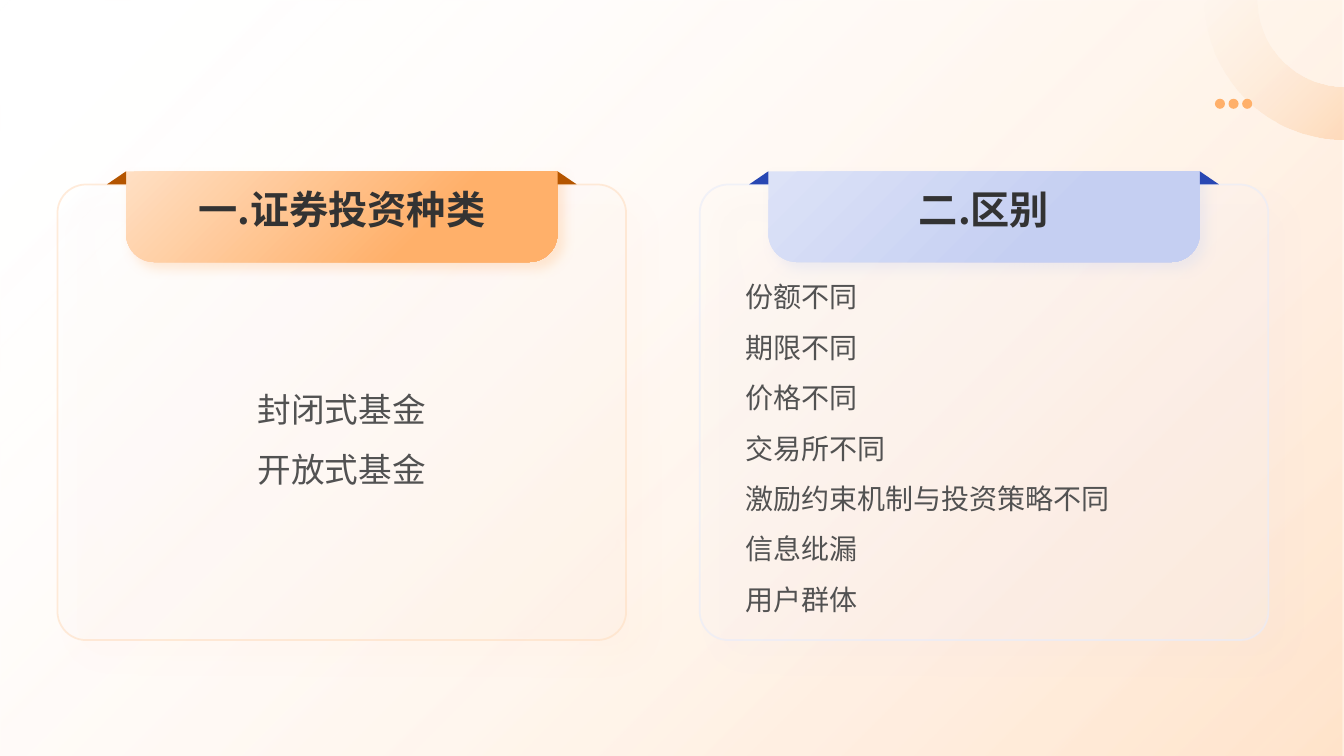
import math

from lxml import etree
from pptx import Presentation
from pptx import util as u
from pptx.dml.color import RGBColor
from pptx.enum import shapes, text
from pptx.oxml import ns

# Content
FONT = "Noto Sans CJK SC"
HEADING_COLOR, LIST_COLOR = "333333", "525252"
ORANGE, PEACH = "FFB06A", "FFDFC3"
CARDS = [
    dict(heading="一.证券投资种类",
         items=["封闭式基金", "开放式基金"],
         left=0.57, list_middle=4.26, size=24, pitch=43, align=text.PP_ALIGN.CENTER,
         tint="FFEFE1", edge=PEACH, pale=PEACH, main=ORANGE, fold="B45500", turn=69),
    dict(heading="二.区别",
         items=["份额不同", "期限不同", "价格不同", "交易所不同",
                "激励约束机制与投资策略不同", "信息纰漏", "用户群体"],
         left=6.94, list_middle=4.36, size=20, pitch=36, align=text.PP_ALIGN.JUSTIFY,
         tint="F3F5FC", edge="E8ECFA", pale="DCE2F7", main="C5CFF2", fold="2847B3", turn=66),
]

# Layout, in inches
SLIDE_W, SLIDE_H = 13.33, 7.5
CARD_TOP, CARD_W, CARD_H = 1.83, 5.64, 4.52
BANNER_TOP, BANNER_W, BANNER_H = 1.7, 4.28, 0.9
FOLD_W, FOLD_H = 0.19, 0.13
LIST_INSET, LIST_H = 0.45, 3.5
RING_OUTER, RING_INNER, RING_STEPS = 1.38, 0.86, 40
DOT, DOT_PITCH, DOT_LEFT, DOT_TOP = 0.1, 0.135, 12.05, 0.98

MSO = shapes.MSO_SHAPE


def sub(parent, tag, **attributes):
    return etree.SubElement(parent, ns.qn(tag), {k: str(v) for k, v in attributes.items()})


def color(parent, hex_color, alpha=100):
    sub(sub(parent, "a:srgbClr", val=hex_color), "a:alpha", val=alpha * 1000)


def paint(shape, stops, corner=False):
    """Fill with (position, colour, alpha) stops; a single stop is a solid fill."""
    shape.line.fill.background()
    shape.shadow.inherit = False
    props = shape._element.spPr
    if len(stops) == 1:
        fill = etree.Element(ns.qn("a:solidFill"))
        color(fill, *stops[0][1:])
    else:
        fill = etree.Element(ns.qn("a:gradFill"), rotWithShape="1")
        stop_list = sub(fill, "a:gsLst")
        for position, hex_color, alpha in stops:
            color(sub(stop_list, "a:gs", pos=position * 1000), hex_color, alpha)
        if corner:
            sub(sub(fill, "a:path", path="circle"), "a:fillToRect", l=100000, t=100000)
        else:
            sub(fill, "a:lin", ang=45 * 60000, scaled=0)
    props.find(ns.qn("a:ln")).addprevious(fill)


def cast_shadow(shape, hex_color, alpha, blur, distance):
    effects = shape._element.spPr.find(ns.qn("a:effectLst"))
    shadow = sub(effects, "a:outerShdw", blurRad=u.Pt(blur), dist=u.Pt(distance),
                 dir=45 * 60000, algn="tl", rotWithShape=0)
    color(shadow, hex_color, alpha)


def add(kind, left, top, width, height, stops, adjust=(), corner=False):
    shape = slide.shapes.add_shape(kind, *map(u.Inches, (left, top, width, height)))
    for i, value in enumerate(adjust):
        shape.adjustments[i] = value
    paint(shape, stops, corner)
    return shape


def write(holder, box, lines, size, hex_color, align, bold=False, pitch=None):
    holder.left, holder.top, holder.width, holder.height = map(u.Inches, box)
    slide.shapes._spTree.append(holder._element)  # bring in front of the card
    frame = holder.text_frame
    frame.margin_left = frame.margin_right = frame.margin_top = frame.margin_bottom = 0
    frame.vertical_anchor = text.MSO_ANCHOR.MIDDLE
    frame.auto_size = text.MSO_AUTO_SIZE.NONE
    frame.word_wrap = True
    frame.text = "\n".join(lines)
    for paragraph in frame.paragraphs:
        paragraph.alignment = align
        paragraph.space_before = u.Pt(0)
        if pitch:
            paragraph.line_spacing = u.Pt(pitch)
        props = paragraph._p.get_or_add_pPr()
        props.set("marL", "0")
        props.set("indent", "0")
        sub(props, "a:buNone")
        font = paragraph.font
        font.size, font.bold, font.name = u.Pt(size), bold, FONT
        font.color.rgb = RGBColor.from_string(hex_color)
        sub(font._element, "a:ea", typeface=FONT)


prs = Presentation()
prs.slide_width, prs.slide_height = u.Inches(SLIDE_W), u.Inches(SLIDE_H)
slide = prs.slides.add_slide(prs.slide_layouts.get_by_name("Comparison"))
title = slide.shapes.title
title._element.getparent().remove(title._element)

# Background wash
add(MSO.RECTANGLE, 0, 0, SLIDE_W, SLIDE_H, [(0, "FFFFFF", 0), (99, ORANGE, 34)])

# Quarter ring in the top right corner
angles = [math.pi / 2 * i / RING_STEPS for i in range(RING_STEPS + 1)]
arcs = [(RING_OUTER, a) for a in angles] + [(RING_INNER, a) for a in reversed(angles)]
points = [(u.Inches(SLIDE_W - r * math.cos(a)), u.Inches(r * math.sin(a))) for r, a in arcs]
outline = slide.shapes.build_freeform(*points[0])
outline.add_line_segments(points[1:], close=True)
paint(outline.convert_to_shape(), [(0, PEACH, 0), (100, ORANGE, 34)])

# Three dots
for i in range(3):
    add(MSO.OVAL, DOT_LEFT + i * DOT_PITCH, DOT_TOP, DOT, DOT, [(0, ORANGE, 100)])

# Cards with banner, folds, heading and list
for n, card in enumerate(CARDS):
    left, main = card["left"], card["main"]
    card_box = (left, CARD_TOP, CARD_W, CARD_H)
    base = add(MSO.ROUNDED_RECTANGLE, *card_box, [(0, "FFFFFF", 5)], [0.063])
    panel = add(MSO.ROUNDED_RECTANGLE, *card_box,
                [(0, card["tint"], 20), (100, "FFFFFF", 0)], [0.063], corner=True)
    for layer in (base, panel):
        cast_shadow(layer, main, 8, 22, 18)
    panel.line.width = u.Pt(1.25)
    panel.line.color.rgb = RGBColor.from_string(card["edge"])
    edge_color = panel._element.spPr.find(ns.qn("a:ln")).find(".//" + ns.qn("a:srgbClr"))
    sub(edge_color, "a:alpha", val=60000)

    banner_left = left + (CARD_W - BANNER_W) / 2
    banner = add(MSO.ROUND_2_SAME_RECTANGLE, banner_left, BANNER_TOP, BANNER_W, BANNER_H,
                 [(0, card["pale"], 100), (card["turn"], main, 100), (100, main, 100)],
                 [0, 0.314])
    cast_shadow(banner, main, 25, 8, 6)
    for fold_left, apex in ((banner_left - FOLD_W, 1), (banner_left + BANNER_W, 0)):
        add(MSO.ISOSCELES_TRIANGLE, fold_left, BANNER_TOP, FOLD_W, FOLD_H,
            [(0, card["fold"], 100)], [apex])

    holders = {p.placeholder_format.idx: p for p in slide.placeholders}
    write(holders[2 * n + 1], (banner_left, BANNER_TOP - 0.08, BANNER_W, BANNER_H),
          [card["heading"]], 28, HEADING_COLOR, text.PP_ALIGN.CENTER, bold=True)
    list_box = (left + LIST_INSET, card["list_middle"] - LIST_H / 2,
                CARD_W - 2 * LIST_INSET, LIST_H)
    write(holders[2 * n + 2], list_box, card["items"], card["size"], LIST_COLOR,
          card["align"], pitch=card["pitch"])

prs.save("out.pptx")
